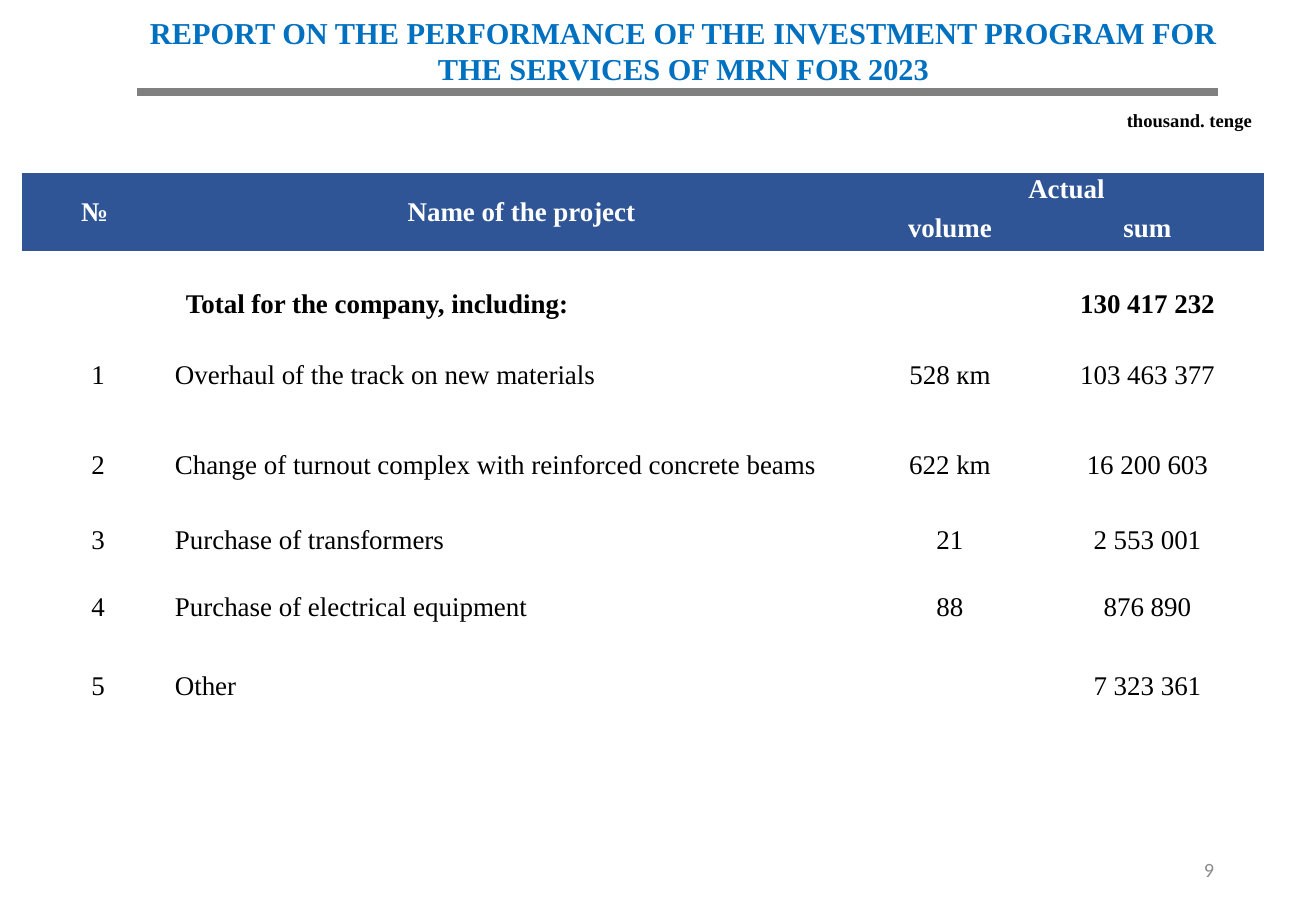
from lxml.etree import SubElement
from pptx import Presentation
from pptx.dml.color import RGBColor
from pptx.enum.shapes import MSO_CONNECTOR
from pptx.enum.text import MSO_ANCHOR as Anchor, PP_ALIGN as Align
from pptx.oxml.ns import qn
from pptx.util import Emu, Pt

COLORS = {
    "title": "0070C0", "rule": "808080", "header": "2F5597",
    "white": "FFFFFF", "black": "000000", "page": "8C8C8C",
}
SERIF = "Times New Roman"
NO_GRID_STYLE = "{2D5ABB26-0587-4C30-8999-92F81FD0307C}"


def px(count):
    """Turn pixels (121.5 to the inch) into EMU."""
    return Emu(count * 7526)


def write(frame, text, size, color, align, bold=False, font=SERIF):
    paragraph = frame.paragraphs[0]
    paragraph.alignment = align
    run = paragraph.add_run()
    run.text = text
    run.font.name = font
    run.font.size = Pt(size)
    run.font.bold = bold
    run.font.color.rgb = RGBColor.from_string(COLORS[color])


prs = Presentation()
prs.slide_width, prs.slide_height = px(1316), px(911)
slide = prs.slides.add_slide(prs.slide_layouts[6])

# Title, unit and page number
labels = [
    ((113, 8, 1141, 123), Anchor.TOP,
     ("REPORT ON THE PERFORMANCE OF THE INVESTMENT PROGRAM FOR THE SERVICES OF MRN FOR 2023",
      18, "title", Align.CENTER, True)),
    ((1104, 102, 160, 36), Anchor.MIDDLE,
     ("thousand. tenge", 11, "black", Align.RIGHT, True)),
    ((929, 845, 297, 48), Anchor.MIDDLE,
     ("9", 12, "page", Align.RIGHT, False, "Calibri")),
]
for place, anchor, content in labels:
    frame = slide.shapes.add_textbox(*map(px, place)).text_frame
    frame.word_wrap = True
    frame.vertical_anchor = anchor
    write(frame, *content)

title_rule = slide.shapes.add_connector(
    MSO_CONNECTOR.STRAIGHT, px(137), px(92), px(1218), px(92))
title_rule.line.color.rgb = RGBColor.from_string(COLORS["rule"])
title_rule.line.width = Pt(4.5)
SubElement(title_rule._element.spPr, qn("a:effectLst"))

# Project table
HEADER_ROWS, TOTAL_ROW, NAME_COLUMN = 2, 2, 1
rows = [
    ("№ ", "Name of the project", "Actual", ""),
    ("", "", "volume", "sum"),
    ("", "Total for the company, including:", "", "130 417 232"),
    ("1", "Overhaul of the track on new materials", "528 кm", "103 463 377"),
    ("2", "Change of turnout complex with reinforced concrete beams", "622 km", "16 200 603"),
    ("3", "Purchase of transformers", "21", "2 553 001"),
    ("4", "Purchase of electrical equipment", "88", "876 890"),
    ("5", "Other", "", "7 323 361"),
]
column_widths = [152, 695, 162, 233]
row_heights = [31, 46, 75, 98, 83, 66, 68, 90]

projects = slide.shapes.add_table(
    len(rows), len(column_widths), px(22), px(173),
    px(sum(column_widths)), px(sum(row_heights))).table
projects._tbl.tblPr.find(qn("a:tableStyleId")).text = NO_GRID_STYLE
for column, width in zip(projects.columns, column_widths):
    column.width = px(width)
for row, height in zip(projects.rows, row_heights):
    row.height = px(height)

for r, texts in enumerate(rows):
    is_header = r < HEADER_ROWS
    for c, text in enumerate(texts):
        cell = projects.cell(r, c)
        cell.fill.solid()
        cell.fill.fore_color.rgb = RGBColor.from_string(
            COLORS["header" if is_header else "white"])
        cell.vertical_anchor = Anchor.MIDDLE
        cell.margin_left = cell.margin_right = px(1)
        cell.margin_top = cell.margin_bottom = 0
        is_name = c == NAME_COLUMN and not is_header
        if r == TOTAL_ROW:
            cell.margin_top = px(31)
            if is_name:
                cell.margin_left = px(12)
        if text:
            write(cell.text_frame, text, 16, "white" if is_header else "black",
                  Align.LEFT if is_name else Align.CENTER, r <= TOTAL_ROW)

for first, last in [((0, 0), (1, 0)), ((0, 1), (1, 1)), ((0, 2), (0, 3))]:
    projects.cell(*first).merge(projects.cell(*last))

prs.save("out.pptx")
